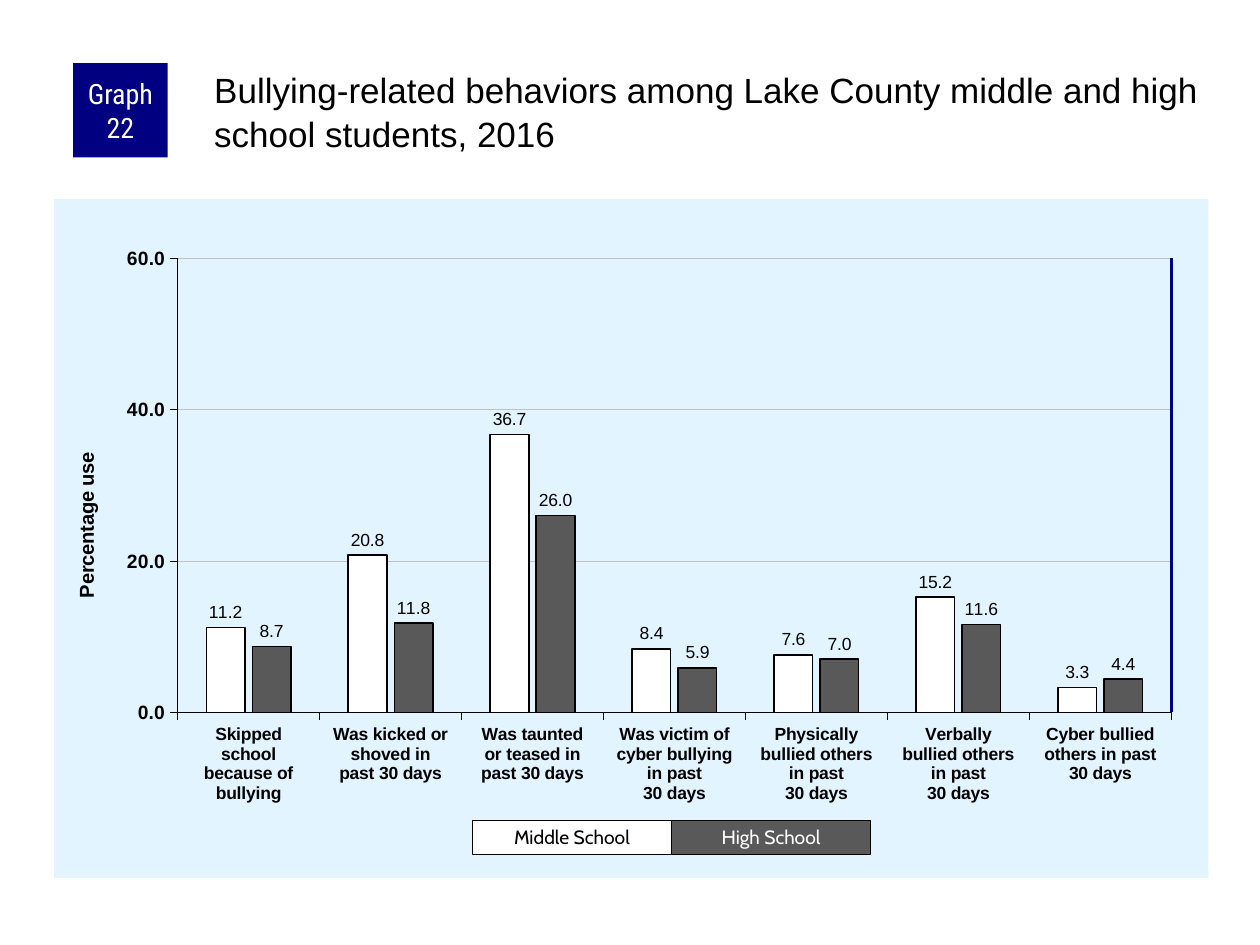
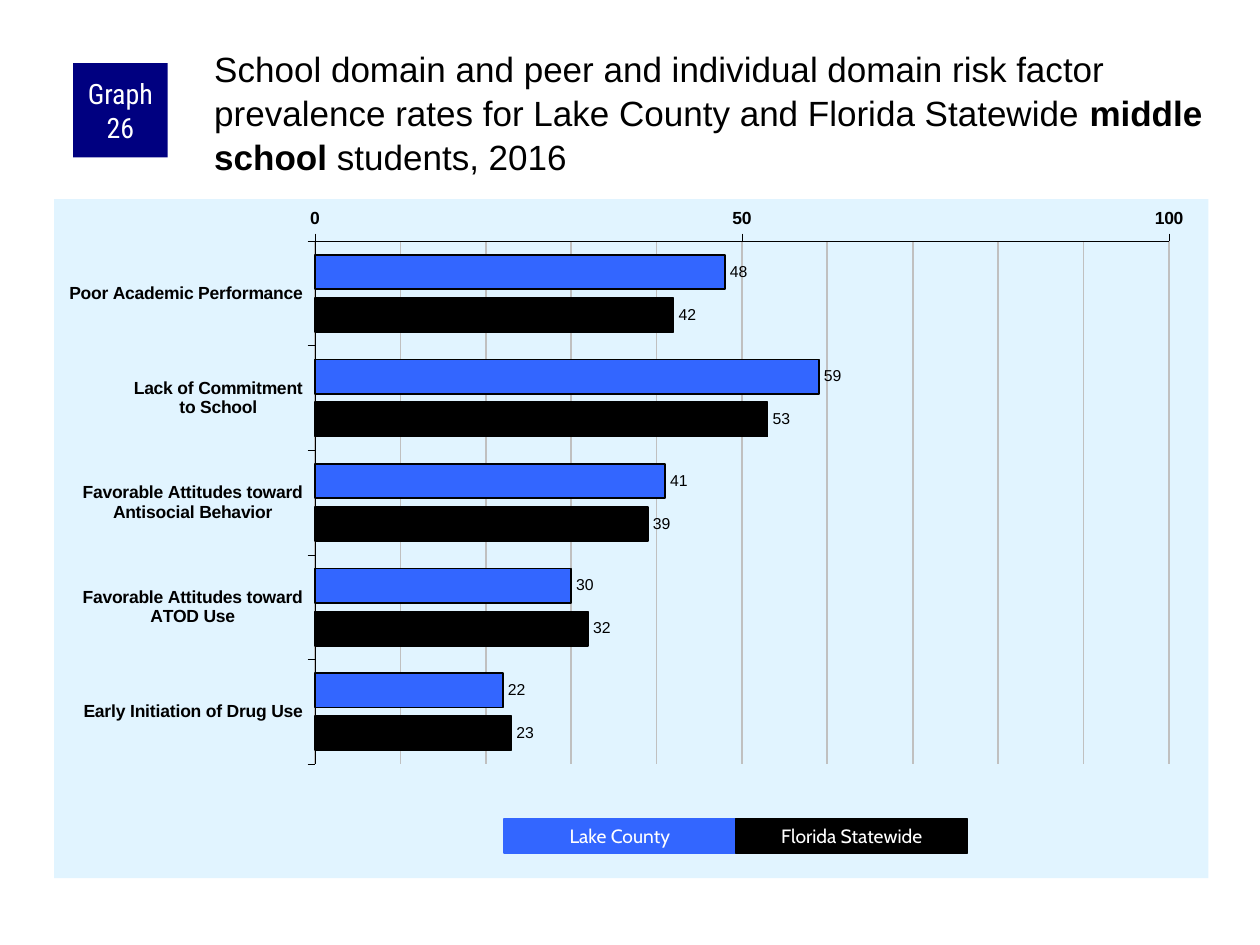
import copy

import pptx
import pptx.chart.data
import pptx.dml.color
import pptx.enum.chart
import pptx.enum.shapes
import pptx.enum.text
import pptx.oxml
import pptx.oxml.ns
import pptx.util
from lxml import etree

Inches, Pt = pptx.util.Inches, pptx.util.Pt
RGBColor = pptx.dml.color.RGBColor
ChartType = pptx.enum.chart.XL_CHART_TYPE
qn = pptx.oxml.ns.qn

BLACK = RGBColor(0x00, 0x00, 0x00)
WHITE = RGBColor(0xFF, 0xFF, 0xFF)
NAVY = RGBColor(0x00, 0x00, 0x80)
BLUE = RGBColor(0x33, 0x66, 0xFF)
DARK_GRAY = RGBColor(0x59, 0x59, 0x59)
GRID_GRAY = RGBColor(0xC0, 0xC0, 0xC0)
PALE_BLUE = RGBColor(0xE1, 0xF4, 0xFF)

BODY_FONT, BADGE_FONT, LEGEND_FONT = "Arial", "Roboto Condensed", "Cabin"
CHART_BOX = (0.43, 1.58, 9.16, 5.39)
LEGEND_HEIGHT = 0.27

# Title runs are (text, bold); series are (legend name, values, fill, legend line, legend text).
GRAPHS = [
    {
        "badge": "Graph 22",
        "title": [("Bullying-related behaviors among Lake County middle and high "
                   "school students, 2016", False)],
        "title_top": 0.5,
        "type": ChartType.COLUMN_CLUSTERED,
        "categories": [
            "Skipped\nschool\nbecause of\nbullying",
            "Was kicked or\nshoved in\npast 30 days",
            "Was taunted\nor teased in\npast 30 days",
            "Was victim of\ncyber bullying\nin past\n30 days",
            "Physically\nbullied others\nin past\n30 days",
            "Verbally\nbullied others\nin past\n30 days",
            "Cyber bullied\nothers in past\n30 days",
        ],
        "series": [
            ("Middle School", (11.2, 20.8, 36.7, 8.4, 7.6, 15.2, 3.3), WHITE, BLACK, BLACK),
            ("High School", (8.7, 11.8, 26.0, 5.9, 7.0, 11.6, 4.4), DARK_GRAY, BLACK, WHITE),
        ],
        "axis_title": "Percentage use",
        "maximum": 60, "major": 20, "minor": None,
        "format": "0.0", "value_size": 11, "label_size": 10,
        "gap": 150, "overlap": -20, "grid_width": 0.25,
        "plot": (0.107, 0.087, 0.861, 0.669),
        "edge": ("right", NAVY, 1.5),
        "legend": (3.75, 6.51, 1.58),
    },
    {
        "badge": "Graph 26",
        "title": [("School domain and peer and individual domain risk factor prevalence "
                   "rates for Lake County and Florida Statewide ", False),
                  ("middle school", True), (" students, 2016", False)],
        "title_top": 0.33,
        "type": ChartType.BAR_CLUSTERED,
        "categories": [
            "Poor Academic Performance",
            "Lack of Commitment\nto School",
            "Favorable Attitudes toward\nAntisocial Behavior",
            "Favorable Attitudes toward\nATOD Use",
            "Early Initiation of Drug Use",
        ],
        "series": [
            ("Lake County", (48, 59, 41, 30, 22), BLUE, BLUE, WHITE),
            ("Florida Statewide", (42, 53, 39, 32, 23), BLACK, BLACK, WHITE),
        ],
        "axis_title": None,
        "maximum": 100, "major": 50, "minor": 10,
        "format": "0", "value_size": 10, "label_size": 9,
        "gap": 80, "overlap": -25, "grid_width": 1,
        "plot": (0.226, 0.062, 0.74, 0.77),
        "edge": ("top", BLACK, 0.5),
        "legend": (4, 6.5, 1.84),
    },
]


def set_font(font, name, size, color, bold=False):
    font.name, font.size, font.bold = name, Pt(size), bold
    font.color.rgb = color


def set_line(line, color, width):
    line.color.rgb = color
    line.width = Pt(width)


def add_title(slide, runs, top):
    title = slide.shapes.title
    title.left, title.top = Inches(1.67), Inches(top)
    title.width, title.height = Inches(7.92), Inches(0.83)
    frame = title.text_frame
    frame.word_wrap = True
    frame.auto_size = pptx.enum.text.MSO_AUTO_SIZE.NONE
    frame.vertical_anchor = pptx.enum.text.MSO_ANCHOR.TOP
    frame.margin_left = frame.margin_top = Inches(0.03)
    frame.margin_right = frame.margin_bottom = 0
    paragraph = frame.paragraphs[0]
    paragraph.alignment = pptx.enum.text.PP_ALIGN.LEFT
    paragraph.line_spacing = 1.05
    for text, bold in runs:
        run = paragraph.add_run()
        run.text = text
        set_font(run.font, BODY_FONT, 20, BLACK, bold)


def add_label_box(slide, box, text, fill, font, size, color, line=None):
    shape = slide.shapes.add_shape(pptx.enum.shapes.MSO_SHAPE.RECTANGLE, *map(Inches, box))
    shape.shadow.inherit = False
    shape.fill.solid()
    shape.fill.fore_color.rgb = fill
    if line is None:
        shape.line.fill.background()
    else:
        set_line(shape.line, line, 0.75)
    frame = shape.text_frame
    frame.word_wrap = True
    frame.vertical_anchor = pptx.enum.text.MSO_ANCHOR.MIDDLE
    frame.margin_left = frame.margin_right = Inches(0.05)
    frame.margin_top = frame.margin_bottom = 0
    paragraph = frame.paragraphs[0]
    paragraph.text = text
    paragraph.alignment = pptx.enum.text.PP_ALIGN.CENTER
    set_font(paragraph.font, font, size, color)


def set_chart_background(chart, color):
    properties = pptx.oxml.parse_xml(
        f'<c:spPr {pptx.oxml.ns.nsdecls("c", "a")}><a:solidFill><a:srgbClr val="{color}"/>'
        "</a:solidFill><a:ln><a:noFill/></a:ln></c:spPr>")
    chart.element.find(qn("c:chart")).addnext(properties)


def set_plot_layout(chart, fractions):
    """Fix the inner plot area as fractions (x, y, width, height) of the chart."""
    plot_area = chart.element.find(qn("c:chart")).find(qn("c:plotArea"))
    for layout in plot_area.findall(qn("c:layout")):
        plot_area.remove(layout)
    layout = etree.Element(qn("c:layout"))
    manual = etree.SubElement(layout, qn("c:manualLayout"))
    settings = [("layoutTarget", "inner"), ("xMode", "edge"), ("yMode", "edge")]
    settings += zip("xywh", fractions)
    for tag, value in settings:
        etree.SubElement(manual, qn(f"c:{tag}")).set("val", str(value))
    plot_area.insert(0, layout)


def add_minor_gridlines(chart, unit):
    """Add minor gridlines that look like the major ones."""
    chart.value_axis.minor_unit = unit
    chart.value_axis.has_minor_gridlines = True
    major = next(chart.element.iter(qn("c:majorGridlines")))
    minor = next(chart.element.iter(qn("c:minorGridlines")))
    minor.append(copy.deepcopy(major.find(qn("c:spPr"))))


def format_axes(chart, graph):
    category_axis, value_axis = chart.category_axis, chart.value_axis
    for axis, size in ((category_axis, 10), (value_axis, graph["value_size"])):
        axis.major_tick_mark = pptx.enum.chart.XL_TICK_MARK.OUTSIDE
        axis.minor_tick_mark = pptx.enum.chart.XL_TICK_MARK.NONE
        set_line(axis.format.line, BLACK, 0.25)
        set_font(axis.tick_labels.font, BODY_FONT, size, BLACK, True)
    if graph["type"] == ChartType.BAR_CLUSTERED:
        category_axis.reverse_order = True
        category_axis.crosses = pptx.enum.chart.XL_AXIS_CROSSES.MAXIMUM
    value_axis.minimum_scale, value_axis.maximum_scale = 0, graph["maximum"]
    value_axis.major_unit = graph["major"]
    value_axis.tick_labels.number_format = graph["format"]
    value_axis.tick_labels.number_format_is_linked = False
    value_axis.has_major_gridlines = True
    set_line(value_axis.major_gridlines.format.line, GRID_GRAY, graph["grid_width"])
    if graph["minor"]:
        add_minor_gridlines(chart, graph["minor"])
    if graph["axis_title"]:
        paragraph = value_axis.axis_title.text_frame.paragraphs[0]
        paragraph.text = graph["axis_title"]
        set_font(paragraph.font, BODY_FONT, 11.5, BLACK, True)


def add_graph(slide, graph):
    data = pptx.chart.data.CategoryChartData(number_format=graph["format"])
    data.categories = graph["categories"]
    for name, values, *_ in graph["series"]:
        data.add_series(name, values)
    chart = slide.shapes.add_chart(graph["type"], *map(Inches, CHART_BOX), data).chart
    chart.has_legend = chart.has_title = False
    set_font(chart.font, BODY_FONT, 11.5, BLACK)
    set_chart_background(chart, PALE_BLUE)
    set_plot_layout(chart, graph["plot"])
    format_axes(chart, graph)

    plot = chart.plots[0]
    plot.gap_width, plot.overlap = graph["gap"], graph["overlap"]
    plot.vary_by_categories = False
    for series, (_, _, fill, _, _) in zip(plot.series, graph["series"]):
        series.invert_if_negative = False
        series.format.fill.solid()
        series.format.fill.fore_color.rgb = fill
        set_line(series.format.line, BLACK, 1)
        labels = series.data_labels
        labels.show_value = True
        labels.position = pptx.enum.chart.XL_LABEL_POSITION.OUTSIDE_END
        labels.number_format, labels.number_format_is_linked = graph["format"], False
        set_font(labels.font, BODY_FONT, graph["label_size"], BLACK)


def add_plot_edge(slide, graph):
    """Draw the line that closes the plot area on the side facing away from the axes."""
    side, color, width = graph["edge"]
    chart_left, chart_top, chart_width, chart_height = CHART_BOX
    x, y, plot_width, plot_height = graph["plot"]
    left, right = (chart_left + chart_width * part for part in (x, x + plot_width))
    top, bottom = (chart_top + chart_height * part for part in (y, y + plot_height))
    ends = (right, top, right, bottom) if side == "right" else (left, top, right, top)
    edge = slide.shapes.add_connector(
        pptx.enum.shapes.MSO_CONNECTOR.STRAIGHT, *map(Inches, ends))
    set_line(edge.line, color, width)
    etree.SubElement(edge.element.spPr, qn("a:effectLst"))


def add_legend(slide, graph):
    left, top, width = graph["legend"]
    for index, (name, _, fill, line, color) in enumerate(graph["series"]):
        box = (left + index * width, top, width, LEGEND_HEIGHT)
        add_label_box(slide, box, name, fill, LEGEND_FONT, 11, color, line)


def main():
    presentation = pptx.Presentation()
    presentation.slide_width, presentation.slide_height = Inches(10), Inches(7.5)
    title_only = presentation.slide_layouts[5]
    for graph in GRAPHS:
        slide = presentation.slides.add_slide(title_only)
        add_title(slide, graph["title"], graph["title_top"])
        add_graph(slide, graph)
        add_plot_edge(slide, graph)
        add_label_box(slide, (0.58, 0.5, 0.75, 0.75), graph["badge"],
                      NAVY, BADGE_FONT, 16, WHITE)
        add_legend(slide, graph)
    presentation.save("out.pptx")


if __name__ == "__main__":
    main()
